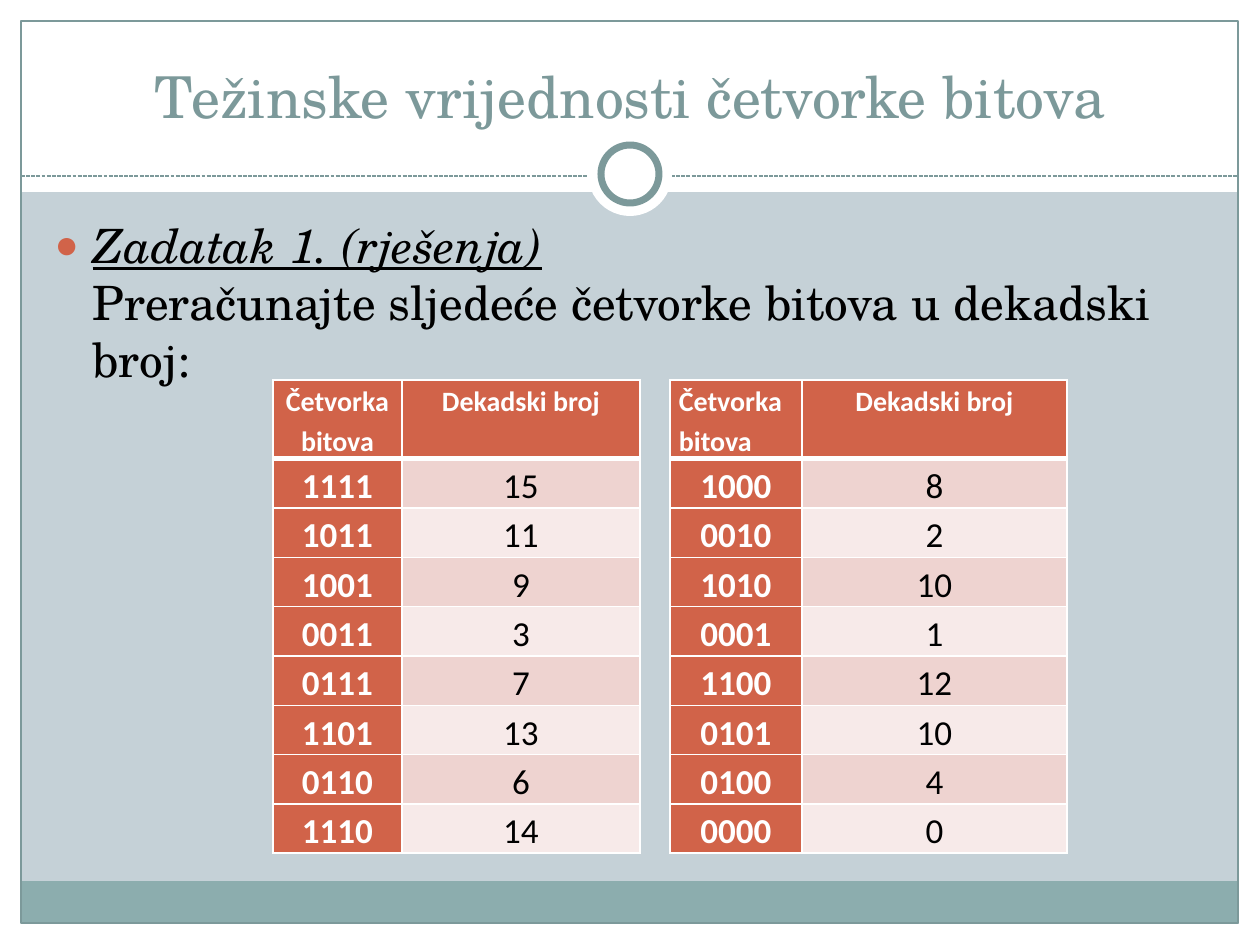
from lxml.etree import SubElement
from pptx import Presentation
from pptx.dml.color import RGBColor
from pptx.enum.dml import MSO_LINE
from pptx.enum.shapes import MSO_CONNECTOR, MSO_SHAPE
from pptx.enum.text import MSO_ANCHOR, MSO_AUTO_SIZE, PP_ALIGN
from pptx.oxml import parse_xml
from pptx.oxml.ns import nsdecls, qn
from pptx.util import Pt

PX = 914400 / 126
WHITE = RGBColor(0xFF, 0xFF, 0xFF)
BLACK = RGBColor(0x00, 0x00, 0x00)
BACKGROUND = RGBColor(0xC5, 0xD1, 0xD7)
TEAL = RGBColor(0x7C, 0x99, 0x9A)
FOOTER = RGBColor(0x8C, 0xAD, 0xAE)
ORANGE = RGBColor(0xD1, 0x63, 0x49)
BANDS = [RGBColor(0xF7, 0xEA, 0xE9), RGBColor(0xEE, 0xD3, 0xD0)]
SERIF = "TeX Gyre Schola"
SANS = "Calibri"


def emu(*lengths):
    return [round(length * PX) for length in lengths]


def add_border(cell, side, width):
    cell._tc.get_or_add_tcPr().append(parse_xml(
        f'<a:{side} {nsdecls("a")} w="{Pt(width)}"><a:solidFill>'
        f'<a:srgbClr val="{WHITE}"/></a:solidFill></a:{side}>'))


presentation = Presentation()
presentation.slide_width, presentation.slide_height = emu(1260, 945)
slide = presentation.slides.add_slide(presentation.slide_layouts[1])
slide.background.fill.solid()
slide.background.fill.fore_color.rgb = BACKGROUND
title, body = slide.placeholders

for kind, box, fill, line, width in [
    (MSO_SHAPE.RECTANGLE, (0, 924, 1260, 21), WHITE, None, 0),
    (MSO_SHAPE.RECTANGLE, (0, 0, 1260, 192), WHITE, None, 0),
    (MSO_SHAPE.RECTANGLE, (0, 0, 21, 945), WHITE, None, 0),
    (MSO_SHAPE.RECTANGLE, (1239, 0, 21, 945), WHITE, None, 0),
    (MSO_SHAPE.RECTANGLE, (21, 881, 1217, 43), FOOTER, None, 0),
    (MSO_SHAPE.RECTANGLE, (21, 21, 1217, 902), None, TEAL, 0.75),
    (None, (21, 176, 1239, 176), None, TEAL, 0.75),
    (MSO_SHAPE.OVAL, (588, 132, 84, 84), WHITE, None, 0),
    (MSO_SHAPE.OVAL, (601, 145, 58, 58), WHITE, TEAL, 4),
]:
    if kind is None:
        shape = slide.shapes.add_connector(MSO_CONNECTOR.STRAIGHT, *emu(*box))
        shape.line.dash_style = MSO_LINE.SQUARE_DOT
        SubElement(shape._element.spPr, qn("a:effectLst"))
    else:
        shape = slide.shapes.add_shape(kind, *emu(*box))
        shape.shadow.inherit = False
        if fill is None:
            shape.fill.background()
        else:
            shape.fill.solid()
            shape.fill.fore_color.rgb = fill
    if line is None:
        shape.line.fill.background()
    else:
        shape.line.color.rgb = line
        shape.line.width = Pt(width)

for placeholder, box, anchor, align, size, color in [
    (title, (42, 32, 1176, 104), MSO_ANCHOR.BOTTOM, PP_ALIGN.CENTER, 33, TEAL),
    (body, (42, 210, 1172, 630), MSO_ANCHOR.TOP, PP_ALIGN.LEFT, 27, BLACK),
]:
    slide.shapes._spTree.append(placeholder._element)
    placeholder.left, placeholder.top, placeholder.width, placeholder.height = emu(*box)
    frame = placeholder.text_frame
    frame.word_wrap = True
    frame.auto_size = MSO_AUTO_SIZE.NONE
    frame.vertical_anchor = anchor
    paragraph = frame.paragraphs[0]
    paragraph.alignment = align
    paragraph.font.name = SERIF
    paragraph.font.size = Pt(size)
    paragraph.font.color.rgb = color

title.text_frame.paragraphs[0].add_run().text = "Težinske vrijednosti četvorke bitova"

task = body.text_frame.paragraphs[0]
task.space_before = Pt(5)
heading = task.add_run()
heading.text = "Zadatak 1. (rješenja)"
heading.font.italic = True
heading.font.underline = True
task.add_line_break()
task.add_run().text = "Preračunajte sljedeće četvorke bitova u dekadski broj:"
properties = task._p.get_or_add_pPr()
indent = emu(38)[0]
properties.set("marL", str(indent))
properties.set("indent", str(-indent))
bullet_color = parse_xml(f'<a:buClr {nsdecls("a")}><a:srgbClr val="{ORANGE}"/></a:buClr>')
bullet_size = parse_xml(f'<a:buSzPct {nsdecls("a")} val="85000"/>')
bullet = parse_xml(f'<a:buChar {nsdecls("a")} char="●"/>')
position = list(properties).index(properties.find(qn("a:spcBef"))) + 1
for offset, element in enumerate([bullet_color, bullet_size, bullet]):
    properties.insert(position + offset, element)

HEADER = ("Četvorka bitova", "Dekadski broj")
HEADER_HEIGHT, ROW_HEIGHT = 78, 49
for left, columns, header_align, values in [
    (273, (129, 238), PP_ALIGN.CENTER,
     [("1111", "15"), ("1011", "11"), ("1001", "9"), ("0011", "3"),
      ("0111", "7"), ("1101", "13"), ("0110", "6"), ("1110", "14")]),
    (670, (132, 265), PP_ALIGN.LEFT,
     [("1000", "8"), ("0010", "2"), ("1010", "10"), ("0001", "1"),
      ("1100", "12"), ("0101", "10"), ("0100", "4"), ("0000", "0")]),
]:
    rows = [HEADER] + values
    height = HEADER_HEIGHT + ROW_HEIGHT * len(values)
    table = slide.shapes.add_table(
        len(rows), len(columns), *emu(left, 380, sum(columns), height)).table
    for column, width in zip(table.columns, emu(*columns)):
        column.width = width
    for row_index, row in enumerate(rows):
        is_header = row_index == 0
        table.rows[row_index].height = emu(HEADER_HEIGHT if is_header else ROW_HEIGHT)[0]
        for column_index, text in enumerate(row):
            strong = is_header or column_index == 0
            cell = table.cell(row_index, column_index)
            cell.margin_left, cell.margin_right = emu(9, 9)
            cell.margin_top = cell.margin_bottom = 0
            add_border(cell, "lnL", 1)
            add_border(cell, "lnR", 1)
            add_border(cell, "lnT", 3 if row_index == 1 else 1)
            add_border(cell, "lnB", 3 if is_header else 1)
            cell.fill.solid()
            cell.fill.fore_color.rgb = ORANGE if strong else BANDS[row_index % 2]
            cell.text = text
            paragraph = cell.text_frame.paragraphs[0]
            first_header = is_header and column_index == 0
            paragraph.alignment = header_align if first_header else PP_ALIGN.CENTER
            paragraph.line_spacing = 1.15
            paragraph.font.name = SANS
            paragraph.font.size = Pt(16 if is_header else 20)
            paragraph.font.bold = strong
            paragraph.font.color.rgb = WHITE if strong else BLACK

presentation.save("out.pptx")
